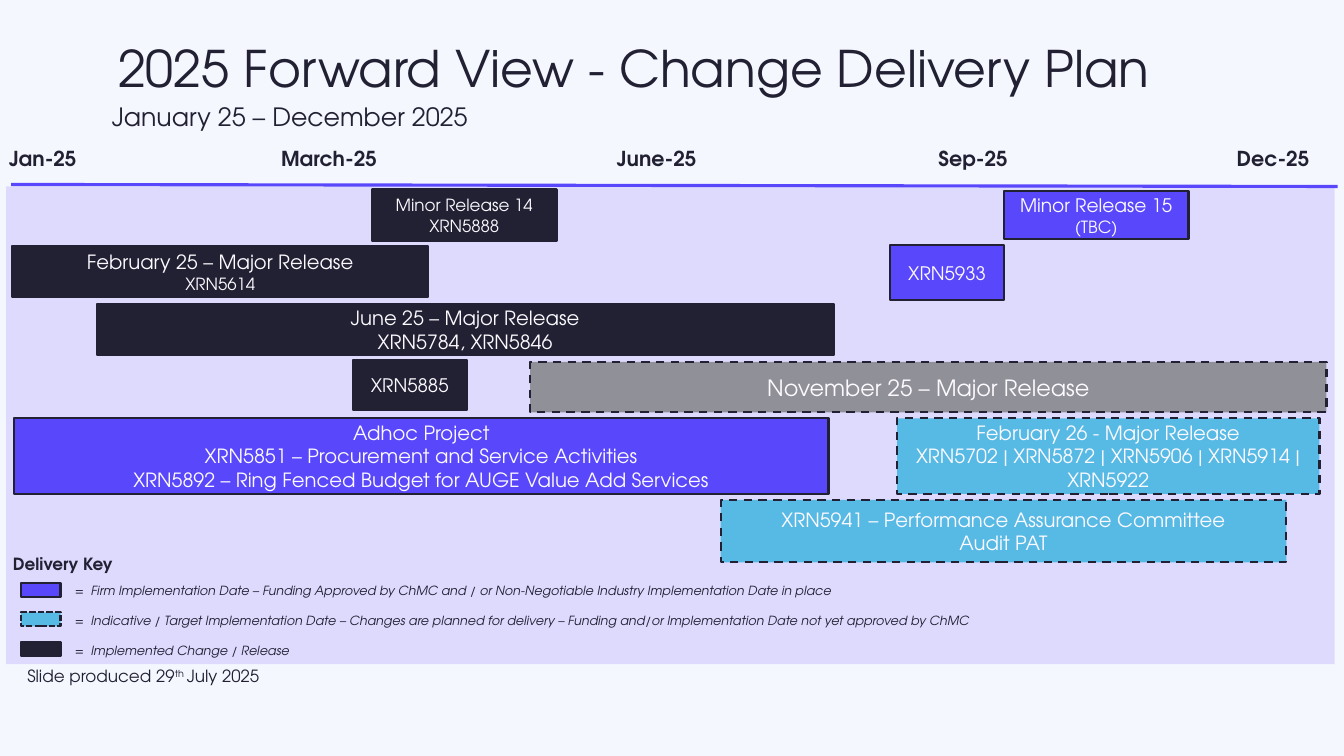
from lxml.etree import SubElement
from pptx import Presentation
from pptx.dml.color import RGBColor
from pptx.enum.dml import MSO_LINE
from pptx.enum.shapes import MSO_CONNECTOR, MSO_SHAPE
from pptx.enum.text import MSO_ANCHOR, MSO_AUTO_SIZE, PP_ALIGN
from pptx.oxml.ns import qn
from pptx.util import Inches, Pt

WIDTH, HEIGHT = Inches(13.33), Inches(7.5)
COL, ROW = WIDTH / 100, HEIGHT / 100
FONT = "TeX Gyre Adventor"
COLORS = {
    "background": "F5F7FF", "panel": "DEDAFE", "ink": "212133", "light": "FDFAFF",
    "firm": "5947FC", "indicative": "57BAE5", "implemented": "212133", "planned": "909099",
}

# label, column
MONTHS = [("Jan-25", -0.08), ("March-25", 20.18), ("June-25", 45.15),
          ("Sep-25", 69.08), ("Dec-25", 91.28)]

# status, (column, row, columns, rows), [(text, size), ...]
RELEASES = [
    ("implemented", (27.68, 25.07, 13.73, 6.8),
     [("Minor Release 14", 12), ("XRN5888", 12)]),
    ("firm", (74.7, 25.33, 13.73, 6.27),
     [("Minor Release 15", 13.3), ("(TBC)", 12)]),
    ("implemented", (0.9, 32.53, 30.98, 6.8),
     [("February 25 – Major Release", 14), ("XRN5614", 12)]),
    ("firm", (66.23, 32.4, 8.48, 7.33), [("XRN5933", 13.3)]),
    ("implemented", (7.2, 40.27, 54.83, 6.67),
     [("June 25 – Major Release", 14), ("XRN5784, XRN5846", 14)]),
    ("implemented", (26.25, 47.6, 8.48, 6.67), [("XRN5885", 13.3)]),
    ("planned", (39.45, 47.87, 59.25, 6.67), [("November 25 – Major Release", 16)]),
    ("firm", (1.05, 55.33, 60.6, 10),
     [("Adhoc Project", 14),
      ("XRN5851 – Procurement and Service Activities", 14),
      ("XRN5892 – Ring Fenced Budget for AUGE Value Add Services", 14)]),
    ("indicative", (66.75, 55.33, 31.43, 10),
     [("February 26 - Major Release", 14),
      ("XRN5702 | XRN5872 | XRN5906 | XRN5914 | XRN5922", 14)]),
    ("indicative", (53.63, 66.13, 42.08, 8.27),
     [("XRN5941 – Performance Assurance Committee", 14), ("Audit PAT", 14)]),
]

KEY = [
    ("firm", MSO_LINE.SOLID, "Firm Implementation Date – Funding Approved by ChMC and / or "
     "Non-Negotiable Industry Implementation Date in place"),
    ("indicative", MSO_LINE.SQUARE_DOT, "Indicative / Target Implementation Date – Changes are planned "
     "for delivery – Funding and/or Implementation Date not yet approved by ChMC"),
    ("implemented", MSO_LINE.SOLID, "Implemented Change / Release"),
]
KEY_TOP, KEY_PITCH = 77.07, 3.93


def rgb(name):
    return RGBColor.from_string(COLORS[name])


def place(col, row, cols, rows):
    return [round(v) for v in (col * COL, row * ROW, cols * COL, rows * ROW)]


def add_run(p, text, size, color="ink", **formats):
    r = p.add_run()
    r.text = text
    r.font.color.rgb = rgb(color)
    for name, value in {"name": FONT, "size": Pt(size), **formats}.items():
        setattr(r.font, name, value)
    return r


def add_text(slide, box, anchor=MSO_ANCHOR.TOP):
    """Add a wrapping text box and return its text frame."""
    tf = slide.shapes.add_textbox(*place(*box)).text_frame
    tf.word_wrap = True
    tf.vertical_anchor = anchor
    return tf


def add_block(slide, box, color, dash=None):
    """Add a flat rectangle, outlined only when a dash style is given."""
    sp = slide.shapes.add_shape(MSO_SHAPE.RECTANGLE, *place(*box))
    sp.shadow.inherit = False
    sp.fill.solid()
    sp.fill.fore_color.rgb = rgb(color)
    if dash is None:
        sp.line.fill.background()
    else:
        sp.line.color.rgb = rgb("ink")
        sp.line.width = Pt(1.5)
        sp.line.dash_style = dash
    return sp


def add_release(slide, status, box, lines):
    dashed = status in ("indicative", "planned")
    tf = add_block(slide, box, status, MSO_LINE.DASH if dashed else MSO_LINE.SOLID).text_frame
    tf.word_wrap = True
    tf.vertical_anchor = MSO_ANCHOR.MIDDLE
    for i, (text, size) in enumerate(lines):
        p = tf.add_paragraph() if i else tf.paragraphs[0]
        p.alignment = PP_ALIGN.CENTER
        add_run(p, text, size, "light")


def add_headings(slide):
    title = slide.shapes.title
    title.left, title.top, title.width, title.height = place(8.03, 2.4, 89.1, 14.13)
    title.text_frame.auto_size = MSO_AUTO_SIZE.NONE
    title.text_frame.vertical_anchor = MSO_ANCHOR.MIDDLE
    subtitle = add_text(slide, (7.58, 10.93, 87.23, 9.33), MSO_ANCHOR.MIDDLE)
    for tf, text, size in ((title.text_frame, "2025 Forward View - Change Delivery Plan", 36),
                           (subtitle, "January 25 – December 2025", 18)):
        p = tf.paragraphs[0]
        p.alignment = PP_ALIGN.LEFT
        p.line_spacing = 0.9
        add_run(p, text, size)


def add_timeline(slide):
    add_block(slide, (0.45, 24.67, 98.85, 63.2), "panel")
    x1, y1, x2, y2 = place(0.83, 24.4, 99.53, 24.67)
    axis = slide.shapes.add_connector(MSO_CONNECTOR.STRAIGHT, x1, y1, x2, y2)
    axis.line.color.rgb = rgb("firm")
    axis.line.width = Pt(2.25)
    SubElement(axis._element.spPr, qn("a:effectLst"))
    for month, col in MONTHS:
        tf = add_text(slide, (col, 18.67, 8.7, 4.67))
        add_run(tf.paragraphs[0], month, 14.7, bold=True)


def add_key(slide):
    heading = add_text(slide, (0.23, 72.53, 21.3, 4))
    add_run(heading.paragraphs[0], "Delivery Key", 12, bold=True)
    tf = add_text(slide, (4.83, 76.4, 75, 11.4))
    for i, (status, dash, meaning) in enumerate(KEY):
        add_block(slide, (1.58, KEY_TOP + i * KEY_PITCH, 2.93, 1.87), status, dash)
        p = tf.add_paragraph() if i else tf.paragraphs[0]
        if i:
            p.space_before = Pt(10.8)
        tabs = SubElement(p._p.get_or_add_pPr(), qn("a:tabLst"))
        SubElement(tabs, qn("a:tab"), pos=str(Inches(0.16)), algn="l")
        add_run(p, f"=\t{meaning}", 9, italic=True)


def add_production_date(slide):
    p = add_text(slide, (1.13, 87.6, 18.9, 3.47), MSO_ANCHOR.MIDDLE).paragraphs[0]
    p.alignment = PP_ALIGN.RIGHT
    add_run(p, "Slide produced 29", 12)
    ordinal = add_run(p, "th ", 12)
    ordinal._r.get_or_add_rPr().set("baseline", "30000")
    add_run(p, "July 2025", 12)


def main():
    prs = Presentation()
    prs.slide_width, prs.slide_height = WIDTH, HEIGHT
    slide = prs.slides.add_slide(prs.slide_layouts[5])
    slide.background.fill.solid()
    slide.background.fill.fore_color.rgb = rgb("background")
    add_headings(slide)
    add_timeline(slide)
    for release in RELEASES:
        add_release(slide, *release)
    add_key(slide)
    add_production_date(slide)
    prs.save("out.pptx")


if __name__ == "__main__":
    main()
